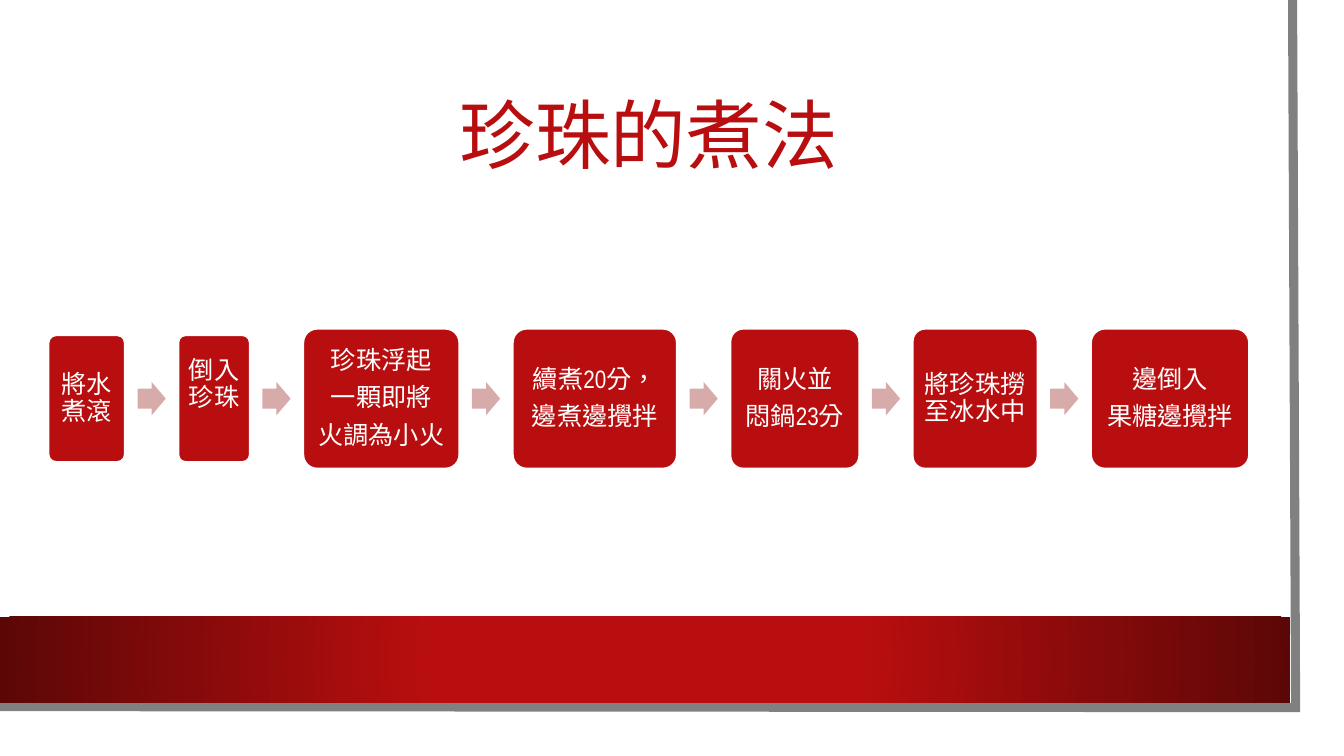
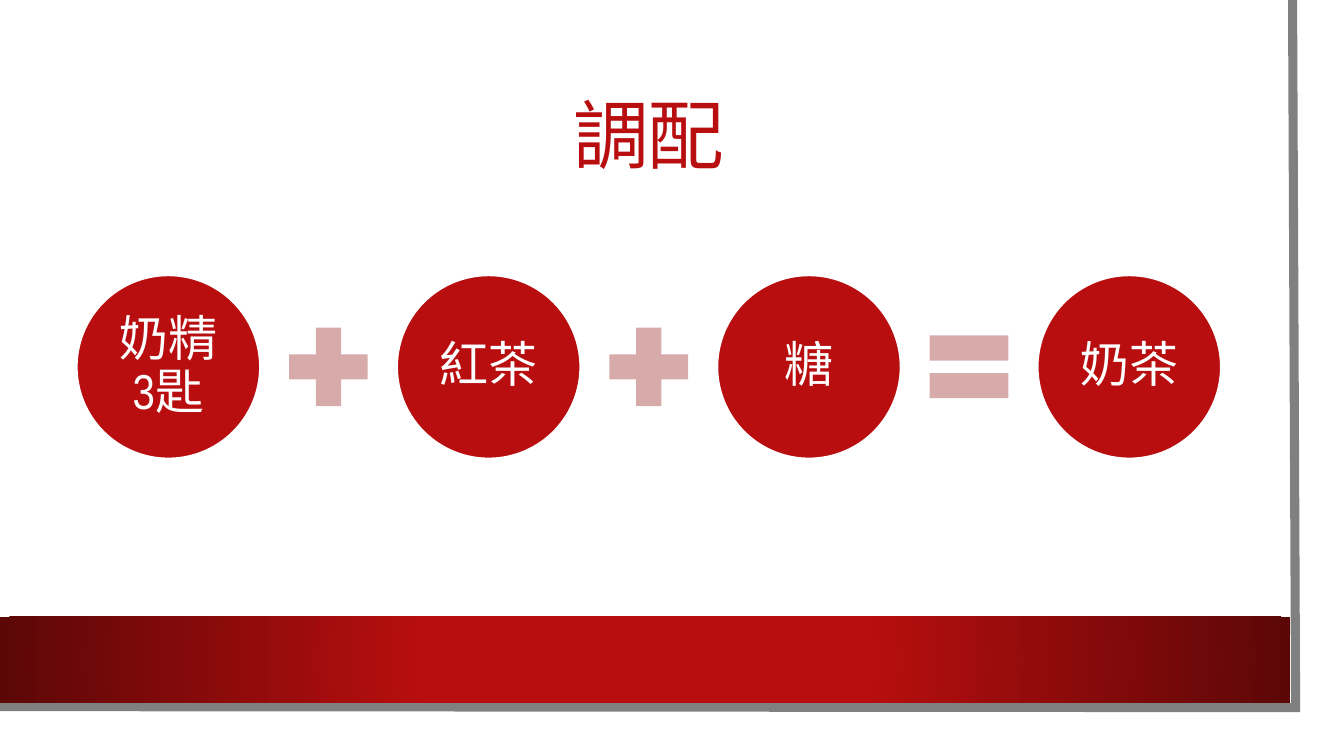
from lxml import etree
from pptx import Presentation
from pptx.dml.color import RGBColor
from pptx.enum.lang import MSO_LANGUAGE_ID
from pptx.enum.shapes import MSO_SHAPE
from pptx.enum.text import MSO_ANCHOR, PP_ALIGN
from pptx.oxml import parse_xml
from pptx.oxml.ns import nsdecls, qn
from pptx.util import Inches, Pt

RECT, ROUND, OVAL = MSO_SHAPE.RECTANGLE, MSO_SHAPE.ROUNDED_RECTANGLE, MSO_SHAPE.OVAL
ARROW, PLUS, EQUAL = MSO_SHAPE.RIGHT_ARROW, MSO_SHAPE.MATH_PLUS, MSO_SHAPE.MATH_EQUAL
CENTER, MIDDLE = PP_ALIGN.CENTER, MSO_ANCHOR.MIDDLE
CHINESE = MSO_LANGUAGE_ID.TRADITIONAL_CHINESE

COLORS = {
    "red": "B80E0F",
    "dark": "5C0707",
    "pink": "D8ABAB",
    "gray": "808080",
    "white": "FFFFFF",
}
FONT = "Arial Narrow"
SLIDE_W, SLIDE_H = 13.33, 7.5
TITLE_BOX = (0.75, 0.75, 11.37, 1.26)
FLOW_BOX = (0.48, 3.26, 11.91, 1.39)
SUM_BOX = (0.76, 2.73, 11.35, 1.82)
SHORT_H = 1.26
LINE_H = 0.27

STEPS = [
    (0.76, SHORT_H, "將水煮滾", 0),
    (0.71, SHORT_H, "倒入珍珠", LINE_H),
    (1.55, 1.39, "珍珠浮起\n一顆即將\n火調為小火", 0),
    (1.63, 1.39, "續煮20分，\n邊煮邊攪拌", 0),
    (1.28, 1.39, "關火並\n悶鍋23分", 0),
    (1.24, 1.39, "將珍珠撈至冰水中", 0),
    (1.57, 1.39, "邊倒入\n果糖邊攪拌", 0),
]
INGREDIENTS = ["奶精3匙", "紅茶", "糖", "奶茶"]
OPERATORS = [PLUS, PLUS, EQUAL]


def rgb(name):
    return RGBColor.from_string(COLORS[name])


def add_shape(s, kind, x, y, w, h, fill, outline=False):
    sp = s.shapes.add_shape(kind, Inches(x), Inches(y), Inches(w), Inches(h))
    sp.shadow.inherit = False
    sp.fill.solid()
    sp.fill.fore_color.rgb = rgb(fill)
    if outline:
        sp.line.color.rgb = rgb("white")
        sp.line.width = Pt(1.5)
    else:
        sp.line.fill.background()
    return sp


def format_text(tf, size, color, space_after=0):
    tf.word_wrap = True
    tf.vertical_anchor = MIDDLE
    for p in tf.paragraphs:
        p.alignment = CENTER
        p.line_spacing = 0.9
        p.space_after = Pt(space_after)
        for r in p.runs:
            r.font.size = Pt(size)
            r.font.name = FONT
            r.font.language_id = CHINESE
            r.font.color.rgb = rgb(color)


def add_label(sp, text, size, inset, lift=0):
    tf = sp.text_frame
    tf.text = text
    tf.margin_left = tf.margin_right = tf.margin_top = Inches(inset)
    tf.margin_bottom = Inches(inset + lift)
    format_text(tf, size, "white", round(size * 0.4, 1))


def add_edge(s):
    points = [(Inches(x), Inches(y)) for x, y in ((12.82, 0), (12.85, 7.02), (-0.03, 7.01))]
    builder = s.shapes.build_freeform(*points[0])
    builder.add_line_segments(points[1:], close=False)
    sp = builder.convert_to_shape()
    sp.shadow.inherit = False
    sp.fill.background()
    sp.line.color.rgb = rgb("gray")
    sp.line.width = Pt(6.5)
    miter = etree.SubElement(sp.element.spPr.find(qn("a:ln")), qn("a:miter"))
    miter.set("lim", "800000")
    return sp


def add_band(s):
    sp = add_shape(s, RECT, 0, 6.12, 12.8, 0.85, "red")
    gradient = parse_xml(
        f'<a:gradFill {nsdecls("a")} rotWithShape="1"><a:gsLst>'
        f'<a:gs pos="34000"><a:srgbClr val="{COLORS["red"]}"/></a:gs>'
        f'<a:gs pos="100000"><a:srgbClr val="{COLORS["dark"]}"/></a:gs></a:gsLst>'
        '<a:path path="circle"><a:fillToRect l="50000" t="50000" r="50000" b="50000"/>'
        '</a:path></a:gradFill>'
    )
    spPr = sp.element.spPr
    spPr.replace(spPr.find(qn("a:solidFill")), gradient)
    return sp


def place(sp, box):
    sp.left, sp.top, sp.width, sp.height = (Inches(v) for v in box)


def build_layout(layout, s):
    title = layout.placeholders[0]
    place(title, TITLE_BOX)
    paper = add_shape(s, RECT, 0, 0, 13.1, 7.27, "white")
    for sp in (paper, add_edge(s), add_band(s)):
        title.element.addprevious(sp.element)


def add_title(s, text):
    title = s.shapes.title
    place(title, TITLE_BOX)
    title.text_frame.text = text
    format_text(title.text_frame, 54, "red")


def add_flow(s, box, steps):
    x, top, width, height = box
    gap = (width - sum(step[0] for step in steps)) / (len(steps) - 1)
    middle = top + height / 2
    arrow_w, arrow_h = 0.28, 0.33
    for i, (w, h, text, lift) in enumerate(steps):
        if i:
            arrow = add_shape(s, ARROW, x - (gap + arrow_w) / 2, middle - arrow_h / 2,
                              arrow_w, arrow_h, "pink")
            arrow.adjustments[0] = 0.6
        sp = add_shape(s, ROUND, x, middle - h / 2, w, h, "red", outline=True)
        sp.adjustments[0] = 0.1
        add_label(sp, text, 18, 0.07, lift)
        x += w + gap


def add_sum(s, box, terms, operators):
    left, top, width, size = box
    pitch = (width - size) / (len(terms) - 1)
    sign = 1.06
    for i, text in enumerate(terms):
        x = left + i * pitch
        sp = add_shape(s, OVAL, x, top, size, size, "red", outline=True)
        add_label(sp, text, 35, 0.05)
        if i < len(operators):
            add_shape(s, operators[i], x + (size + pitch - sign) / 2,
                      top + (size - sign) / 2, sign, sign, "pink")


def main():
    prs = Presentation()
    prs.slide_width, prs.slide_height = Inches(SLIDE_W), Inches(SLIDE_H)
    layout = prs.slide_layouts[5]

    s = prs.slides.add_slide(layout)
    build_layout(layout, s)
    add_title(s, "珍珠的煮法")
    add_flow(s, FLOW_BOX, STEPS)

    s = prs.slides.add_slide(layout)
    add_title(s, "調配")
    add_sum(s, SUM_BOX, INGREDIENTS, OPERATORS)

    prs.save("out.pptx")


if __name__ == "__main__":
    main()
